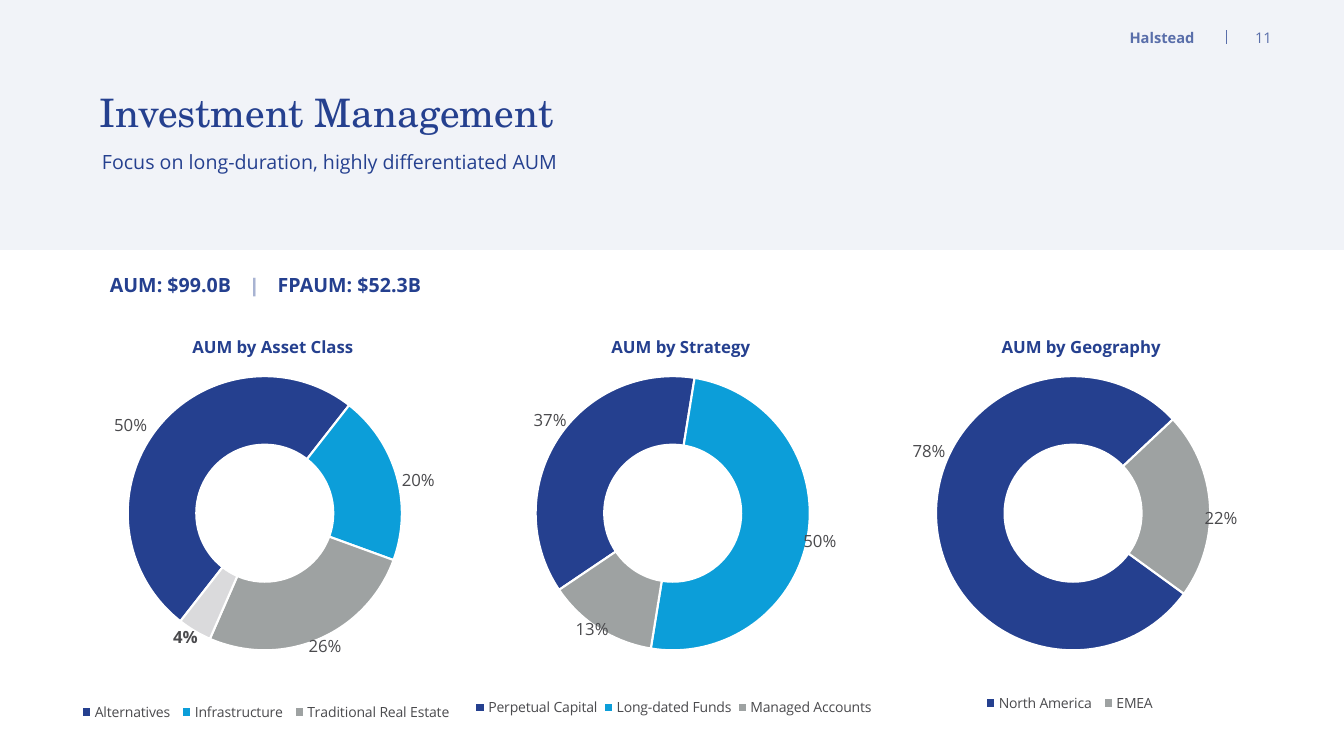
from dataclasses import dataclass
from itertools import accumulate
from math import cos, radians, sin

from lxml.etree import SubElement
from pptx import Presentation
from pptx.chart.data import CategoryChartData
from pptx.dml.color import RGBColor
from pptx.enum.chart import XL_CHART_TYPE, XL_LEGEND_POSITION
from pptx.enum.shapes import MSO_CONNECTOR, MSO_SHAPE
from pptx.enum.text import MSO_ANCHOR, PP_ALIGN
from pptx.oxml import parse_xml
from pptx.oxml.ns import nsdecls, qn
from pptx.util import Cm, Pt

NAVY, SKY, GREY, PALE = "25408F", "0C9ED9", "9EA2A2", "DADADC"
INK, WHITE, BAND, DIVIDER = "4A4A4D", "FFFFFF", "D3D9E9", "A8B3D2"
SANS, SERIF = "Open Sans", "TeX Gyre Schola"

# Panel geometry in centimetres
PANEL_TOP, PANEL_WIDTH, PANEL_HEIGHT = 7.95, 11.46, 11.1
RING_LEFT, RING_TOP, RING_SIZE = 2.25, 1.53, 6.91
RING_MIDDLE = RING_SIZE / 2 * 0.75


@dataclass
class Slice:
    name: str  # an unnamed slice has no legend entry
    share: float
    color: str
    label_at: tuple  # label centre in cm, measured from the ring centre
    bold: bool = False


@dataclass
class Panel:
    title: str
    left: float
    start: int
    legend_box: tuple  # x, y, w, h as fractions of the chart
    slices: list


PANELS = [
    Panel("AUM by Asset Class", 0.97, 218, (0.08, 0.87, 0.84, 0.06), [
        Slice("Alternatives", 0.5, NAVY, (-3.38, -2.22)),
        Slice("Infrastructure", 0.2, SKY, (3.87, -0.83)),
        Slice("Traditional Real Estate", 0.26, GREY, (1.52, 3.35)),
        Slice("", 0.04, PALE, (-2, 3.12), bold=True)]),
    Panel("AUM by Strategy", 11.25, 236, (0.05, 0.86, 0.9, 0.06), [
        Slice("Perpetual Capital", 0.37, NAVY, (-3.09, -2.34)),
        Slice("Long-dated Funds", 0.5, SKY, (3.71, 0.71)),
        Slice("Managed Accounts", 0.13, GREY, (-2.03, 2.92))]),
    Panel("AUM by Geography", 21.34, 126, (0.29, 0.85, 0.4, 0.06), [
        Slice("North America", 0.78, NAVY, (-3.63, -1.56)),
        Slice("EMEA", 0.22, GREY, (3.73, 0.13))]),
]


def rgb(color):
    return RGBColor.from_string(color)


def style_font(font, size, color, bold=False, face=SANS):
    font.name, font.size, font.bold = face, Pt(size), bold
    font.color.rgb = rgb(color)


def add_run(paragraph, text, size, color=NAVY, bold=False, face=SANS):
    run = paragraph.add_run()
    run.text = text
    style_font(run.font, size, color, bold, face)


def add_box(slide, left, top, width, height, margins=True,
            align=PP_ALIGN.LEFT, anchor=MSO_ANCHOR.TOP):
    """Add an empty text box and return its first paragraph."""
    frame = slide.shapes.add_textbox(
        Cm(left), Cm(top), Cm(width), Cm(height)).text_frame
    frame.word_wrap = True
    frame.vertical_anchor = anchor
    if not margins:
        frame.margin_left = frame.margin_right = 0
        frame.margin_top = frame.margin_bottom = 0
    frame.paragraphs[0].alignment = align
    return frame.paragraphs[0]


def add_tab_stops(paragraph, positions):
    stops = SubElement(paragraph._p.get_or_add_pPr(), qn("a:tabLst"))
    for position in positions:
        SubElement(stops, qn("a:tab"), pos=str(Cm(position)), algn="l")


def set_layout(parent, index, **values):
    """Give a chart part a manual layout as its child number index."""
    for old in parent.findall(qn("c:layout")):
        parent.remove(old)
    layout = parse_xml(f'<c:layout {nsdecls("c")}><c:manualLayout/></c:layout>')
    for tag, value in values.items():
        text = value if isinstance(value, str) else f"{value:.4f}"
        SubElement(layout[0], qn(f"c:{tag}"), val=text)
    parent.insert(index, layout)


def add_legend(chart, panel):
    chart.has_legend = True
    legend = chart.legend
    legend.position = XL_LEGEND_POSITION.BOTTOM
    legend.include_in_layout = False
    style_font(legend.font, 10, INK)
    element = legend._element
    index = 1
    for number, part in enumerate(panel.slices):
        if not part.name:
            entry = parse_xml(
                f'<c:legendEntry {nsdecls("c")}><c:idx val="{number}"/>'
                '<c:delete val="1"/></c:legendEntry>')
            element.insert(index, entry)
            index += 1
    x, y, w, h = panel.legend_box
    set_layout(element, index, xMode="edge", yMode="edge", x=x, y=y, w=w, h=h)


def style_slices(series, panel):
    ends = accumulate(part.share for part in panel.slices)
    for number, (part, end) in enumerate(zip(panel.slices, ends)):
        point = series.points[number]
        point.format.fill.solid()
        point.format.fill.fore_color.rgb = rgb(part.color)
        point.format.line.color.rgb = rgb(WHITE)
        point.format.line.width = Pt(1.5)
        style_font(point.data_label.font, 12, INK, part.bold)
        angle = radians(panel.start + 360 * (end - part.share / 2))
        x, y = part.label_at
        label = series._element.find(qn("c:dLbls")).findall(qn("c:dLbl"))[number]
        set_layout(label, 1,
                   x=(x - RING_MIDDLE * sin(angle)) / PANEL_WIDTH,
                   y=(y + RING_MIDDLE * cos(angle)) / PANEL_HEIGHT)


def hide_leader_lines(ring):
    for labels in ring.iter(qn("c:dLbls")):
        leader = labels.find(qn("c:showLeaderLines"))
        if leader is None:
            leader = SubElement(labels, qn("c:showLeaderLines"))
        leader.set("val", "0")


def add_panel(slide, panel):
    data = CategoryChartData(number_format="0%")
    data.categories = [part.name for part in panel.slices]
    data.add_series(panel.title, [part.share for part in panel.slices])
    chart = slide.shapes.add_chart(
        XL_CHART_TYPE.DOUGHNUT, Cm(panel.left), Cm(PANEL_TOP),
        Cm(PANEL_WIDTH), Cm(PANEL_HEIGHT), data).chart
    chart.has_title = False
    style_font(chart.font, 10, INK)
    add_legend(chart, panel)
    plot = chart.plots[0]
    plot.vary_by_categories = True
    style_slices(plot.series[0], panel)

    ring = plot._element
    hide_leader_lines(ring)
    for tag, value in (("c:firstSliceAng", panel.start), ("c:holeSize", 66)):
        ring.find(qn(tag)).set("val", str(value))
    set_layout(ring.getparent(), 0, layoutTarget="inner",
               xMode="edge", yMode="edge",
               x=RING_LEFT / PANEL_WIDTH, y=RING_TOP / PANEL_HEIGHT,
               w=RING_SIZE / PANEL_WIDTH, h=RING_SIZE / PANEL_HEIGHT)

    heading = add_box(slide, panel.left + 0.58, 8.37, 10.66, 1.14,
                      align=PP_ALIGN.CENTER)
    add_run(heading, panel.title, 12, bold=True)


def add_page_header(slide):
    divider = slide.shapes.add_connector(
        MSO_CONNECTOR.STRAIGHT, Cm(30.91), Cm(0.76), Cm(30.91), Cm(1.12))
    divider.line.color.rgb = rgb(NAVY)
    divider.line.width = Pt(0.75)
    SubElement(divider._element.spPr, qn("a:effectLst"))
    for text, left, width, bold in (("Halstead", 17.22, 12.88, True),
                                    ("11", 31.01, 1.04, False)):
        paragraph = add_box(slide, left, 0.69, width, 0.51, margins=False,
                            align=PP_ALIGN.RIGHT, anchor=MSO_ANCHOR.MIDDLE)
        add_run(paragraph, text, 10.5, bold=bold)


def add_band(slide, width):
    band = slide.shapes.add_shape(MSO_SHAPE.RECTANGLE, 0, 0, width, Cm(6.3))
    band.shadow.inherit = False
    band.line.fill.background()
    band.fill.solid()
    band.fill.fore_color.rgb = rgb(BAND)
    color = band._element.spPr.find(qn("a:solidFill"))[0]
    SubElement(color, qn("a:alpha"), val="30000")


def main():
    deck = Presentation()
    deck.slide_width, deck.slide_height = Cm(33.87), Cm(19.05)
    slide = deck.slides.add_slide(deck.slide_layouts[6])
    add_page_header(slide)
    for panel in PANELS:
        add_panel(slide, panel)
    totals = add_box(slide, 2.52, 6.75, 11.94, 1.8)
    add_tab_stops(totals, (3.57, 4.23))
    add_run(totals, "AUM: $99.0B\t", 14, bold=True)
    add_run(totals, "|\t", 14, DIVIDER, True, "Arial")
    add_run(totals, "FPAUM: $52.3B", 14, bold=True)
    add_band(slide, deck.slide_width)
    subtitle = add_box(slide, 2.57, 3.78, 14.83, 1.14, margins=False)
    add_run(subtitle, "Focus on long-duration, highly differentiated AUM", 14)
    title = add_box(slide, 2.51, 2.43, 14.83, 0.84, margins=False)
    title.line_spacing = 0.83
    add_run(title, "Investment Management", 28, face=SERIF)
    deck.save("out.pptx")


if __name__ == "__main__":
    main()
